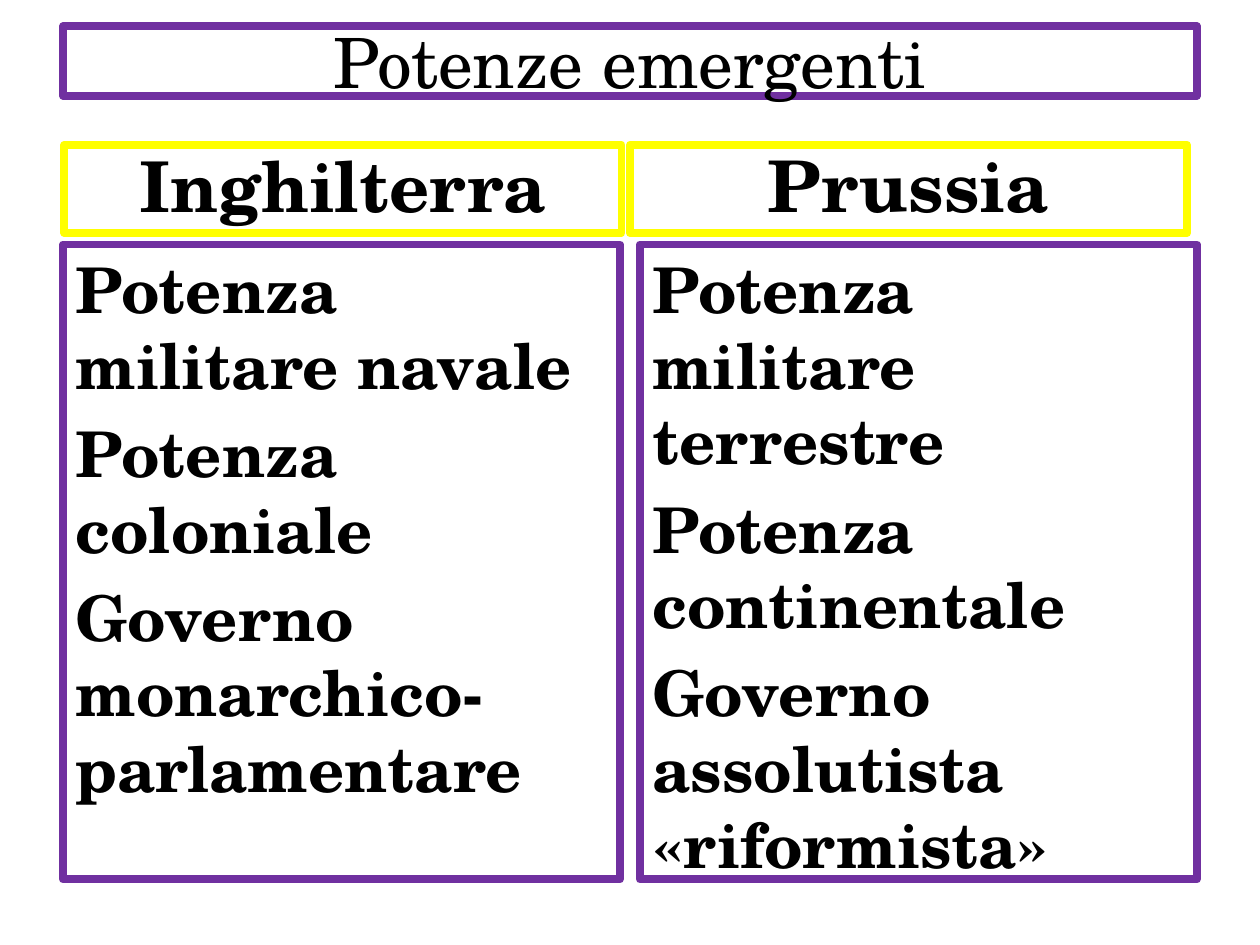
"""Build a slide comparing two emerging powers, England and Prussia."""
from dataclasses import dataclass

from pptx import Presentation
from pptx.dml.color import RGBColor
from pptx.enum.text import MSO_ANCHOR as Anchor, MSO_AUTO_SIZE as AutoSize, PP_ALIGN as Align
from pptx.util import Cm, Pt


@dataclass(frozen=True)
class Theme:
    font: str = "TeX Gyre Schola"
    ink: RGBColor = RGBColor(0x00, 0x00, 0x00)
    purple: RGBColor = RGBColor(0x70, 0x30, 0xA0)
    yellow: RGBColor = RGBColor(0xFF, 0xFF, 0x00)
    border: Pt = Pt(4.5)
    title_size: float = 39.6
    traits_size: float = 36
    spacing_ratio: float = 0.2


@dataclass(frozen=True)
class Power:
    name: str
    name_size: float
    name_left: float
    traits_left: float
    traits: tuple


THEME = Theme()
COLUMN_WIDTH = 11.23
POWERS = (
    Power("Inghilterra", 40, 1.3, 1.27,
          ("Potenza militare navale", "Potenza coloniale",
           "Governo monarchico-parlamentare")),
    Power("Prussia", 40.7, 12.7, 12.9,
          ("Potenza militare terrestre", "Potenza continentale",
           "Governo assolutista «riformista»")),
)


def frame_text(box, lines, size, color, align, anchor, bold=True, spacing=0):
    box.line.color.rgb = color
    box.line.width = THEME.border
    frame = box.text_frame
    frame.word_wrap = True
    frame.auto_size = AutoSize.NONE
    frame.vertical_anchor = anchor
    frame.text = "\n".join(lines)
    for paragraph in frame.paragraphs:
        paragraph.alignment = align
        paragraph.space_before = Pt(round(size * spacing, 1))
        for run in paragraph.runs:
            run.font.name = THEME.font
            run.font.size = Pt(size)
            run.font.bold = bold
            run.font.color.rgb = THEME.ink


def add_title(slide, text):
    title = slide.shapes.title
    title.left, title.top, title.width, title.height = Cm(1.27), Cm(0.53), Cm(22.86), Cm(1.4)
    frame_text(title, [text], THEME.title_size, THEME.purple, Align.CENTER,
               Anchor.MIDDLE, bold=False)


def add_power(slide, power):
    heading = slide.shapes.add_textbox(
        Cm(power.name_left), Cm(2.92), Cm(COLUMN_WIDTH), Cm(1.78))
    frame_text(heading, [power.name], power.name_size, THEME.yellow, Align.CENTER,
               Anchor.BOTTOM, spacing=THEME.spacing_ratio)
    traits = slide.shapes.add_textbox(
        Cm(power.traits_left), Cm(4.93), Cm(COLUMN_WIDTH), Cm(12.8))
    frame_text(traits, power.traits, THEME.traits_size, THEME.purple, Align.LEFT,
               Anchor.TOP, spacing=THEME.spacing_ratio)


def main():
    deck = Presentation()
    deck.slide_width, deck.slide_height = Cm(25.4), Cm(19.05)
    slide = deck.slides.add_slide(deck.slide_layouts[5])
    add_title(slide, "Potenze emergenti")
    for power in POWERS:
        add_power(slide, power)
    deck.save("out.pptx")


if __name__ == "__main__":
    main()
